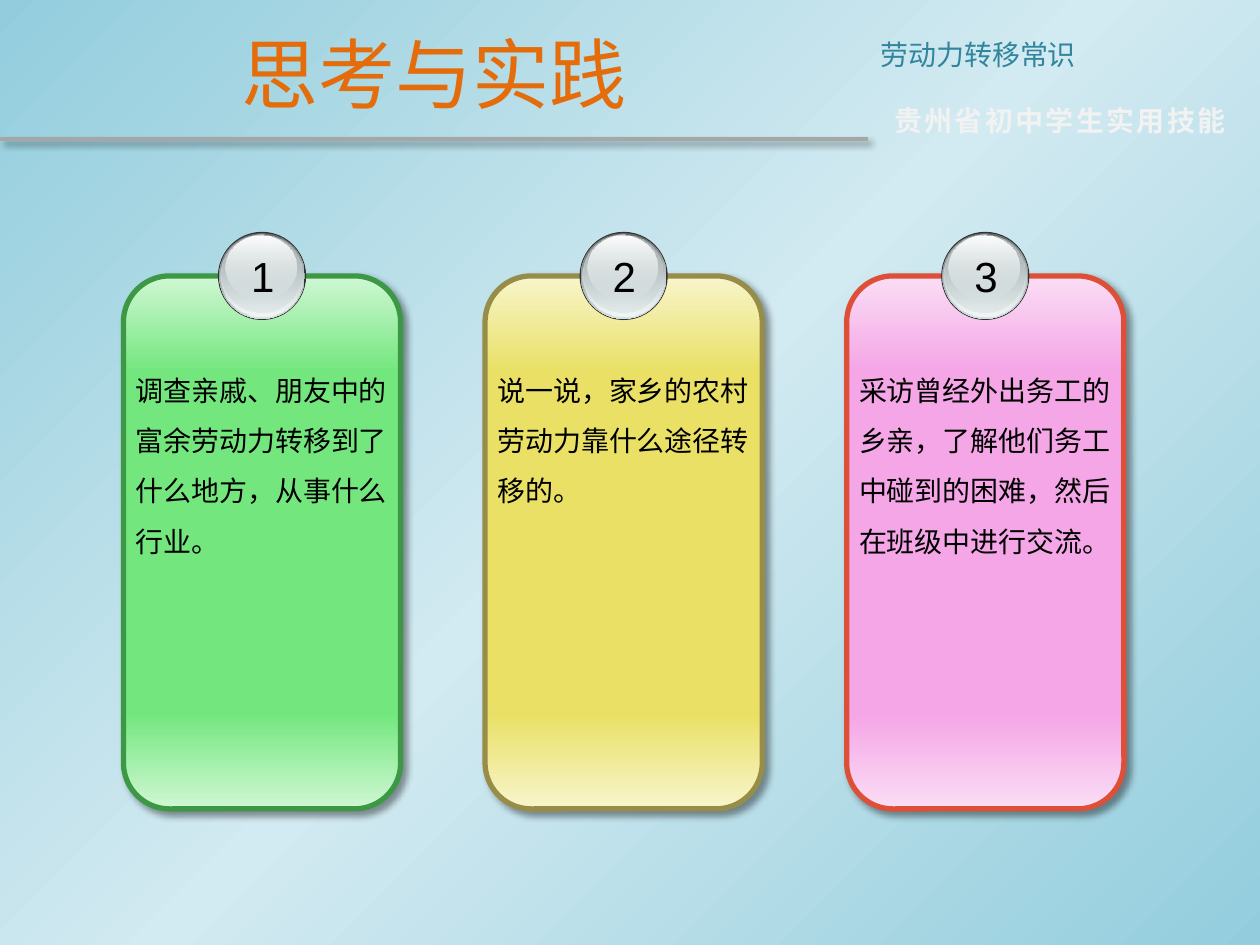
from dataclasses import dataclass
from typing import Optional

from lxml import etree
from pptx import Presentation
from pptx.dml.color import RGBColor
from pptx.enum.shapes import MSO_CONNECTOR, MSO_SHAPE
from pptx.enum.text import MSO_ANCHOR, MSO_AUTO_SIZE, PP_ALIGN
from pptx.oxml.ns import qn
from pptx.shapes.shapetree import GroupShapes
from pptx.text.text import TextFrame
from pptx.util import Inches, Pt

ROUNDED = MSO_SHAPE.ROUNDED_RECTANGLE
OVAL = MSO_SHAPE.OVAL
STRAIGHT = MSO_CONNECTOR.STRAIGHT
LEFT, CENTER, JUSTIFY = PP_ALIGN.LEFT, PP_ALIGN.CENTER, PP_ALIGN.JUSTIFY
TOP, MIDDLE = MSO_ANCHOR.TOP, MSO_ANCHOR.MIDDLE
NO_AUTOFIT = MSO_AUTO_SIZE.NONE


@dataclass(frozen=True)
class Theme:
    chinese_font: str = "Noto Sans CJK SC"
    number_font: str = "Arial"
    title_size: int = 44
    number_size: int = 24
    text_size: int = 16
    title: str = "E46C0A"
    course: str = "31859C"
    program: str = "F2F2F2"
    text: str = "000000"
    rule: str = "A6A6A6"
    badge_rim: str = "333333"
    edge: str = "93CDDD"
    glow: str = "D2EAF1"


@dataclass(frozen=True)
class Stop:
    position: int
    color: str
    opacity: int = 100


@dataclass(frozen=True)
class Card:
    paragraphs: tuple[str, ...]
    pale: str
    strong: str
    border: str
    text_height: float


@dataclass(frozen=True)
class BadgeLayer:
    offset: float
    top: float
    width: float
    height: float
    stops: tuple[Stop, ...] = ()


THEME = Theme()
CARD_LEFT, CARD_TOP, CARD_WIDTH, CARD_HEIGHT, CARD_STEP = 0.98, 2.19, 2.2, 4.23, 2.87
HEADER_WIDTH = 6.89

CARDS = (
    Card(("调查亲戚、朋友中的富余劳动力转移到了什么地方，从事什么", "行业。"),
         "D0F7D4", "73E77E", "3C9844", 1.72),
    Card(("说一说，家乡的农村劳动力靠什么途径转移的。",),
         "F8F5CC", "E9E065", "978D48", 1.31),
    Card(("采访曾经外出务工的乡亲，了解他们务工中碰到的困难，然后", "在班级中进行交流。"),
         "FBDDF5", "F4A6E6", "DD4F37", 1.72),
)

BADGE = (
    BadgeLayer(0.75, 1.84, 0.7, 0.7),
    BadgeLayer(0.76, 1.85, 0.68, 0.68, (Stop(0, "636869"), Stop(100, "D6E1E2"))),
    BadgeLayer(0.77, 1.85, 0.66, 0.66, (Stop(0, "D6E1E2", 0), Stop(100, "F1F5F5"))),
    BadgeLayer(0.78, 1.86, 0.63, 0.62, (Stop(0, "AAB2B3"), Stop(100, "D6E1E2", 48))),
    BadgeLayer(0.81, 1.87, 0.56, 0.5, (Stop(0, "FFFFFF"), Stop(100, "D6E1E2", 38))),
)


def add_color(parent, color: str, opacity: int) -> None:
    element = etree.SubElement(parent, qn("a:srgbClr"), val=color)
    if opacity < 100:
        etree.SubElement(element, qn("a:alpha"), val=str(opacity * 1000))


def set_gradient(fill, container, stops: tuple[Stop, ...], angle: int) -> None:
    fill.gradient()
    fill.gradient_angle = 360 - angle
    stop_list = next(container.iter(qn("a:gsLst")))
    for old_stop in list(stop_list):
        stop_list.remove(old_stop)
    for stop in stops:
        element = etree.SubElement(stop_list, qn("a:gs"), pos=str(stop.position * 1000))
        add_color(element, stop.color, stop.opacity)


def add_shadow(shape) -> None:
    properties = shape._element.spPr
    for old_effects in properties.findall(qn("a:effectLst")):
        properties.remove(old_effects)
    effects = etree.SubElement(properties, qn("a:effectLst"))
    shadow = etree.SubElement(
        effects, qn("a:outerShdw"), blurRad=str(Pt(4)), dist=str(Pt(3)),
        dir="2700000", algn="tl", rotWithShape="0")
    add_color(shadow, "000000", 40)


def write_text(frame: TextFrame, *paragraphs: str, size: int = THEME.text_size,
               color: str = THEME.text, font: str = THEME.chinese_font,
               bold: bool = False, spacing: int = 0, align: PP_ALIGN = LEFT,
               anchor: MSO_ANCHOR = TOP, line_spacing: Optional[float] = None,
               wrap: bool = True) -> None:
    frame.word_wrap = wrap
    frame.auto_size = NO_AUTOFIT
    frame.vertical_anchor = anchor
    for index, text in enumerate(paragraphs):
        paragraph = frame.add_paragraph() if index else frame.paragraphs[0]
        paragraph.alignment = align
        paragraph.line_spacing = line_spacing
        run = paragraph.add_run()
        run.text = text
        run.font.size = Pt(size)
        run.font.bold = bold
        run.font.color.rgb = RGBColor.from_string(color)
        run.font.name = font
        properties = run.font._element
        etree.SubElement(properties, qn("a:ea"), typeface=font)
        if spacing:
            properties.set("spc", str(spacing))


def add_text(shapes, left: float, top: float, width: float, height: float,
             *paragraphs: str, **text_format) -> None:
    box = shapes.add_textbox(Inches(left), Inches(top), Inches(width), Inches(height))
    write_text(box.text_frame, *paragraphs, **text_format)


def add_badge(shapes: GroupShapes, card_left: float, number: int) -> None:
    for layer in BADGE:
        oval = shapes.add_shape(OVAL, Inches(card_left + layer.offset), Inches(layer.top),
                                Inches(layer.width), Inches(layer.height))
        oval.shadow.inherit = False
        oval.line.fill.background()
        if layer.stops:
            set_gradient(oval.fill, oval._element, layer.stops, 90)
        else:
            oval.fill.solid()
            oval.fill.fore_color.rgb = RGBColor.from_string(THEME.badge_rim)
    add_text(shapes, card_left + 0.91, 1.94, 0.39, 0.5, str(number),
             size=THEME.number_size, font=THEME.number_font, align=CENTER, wrap=False)


def add_card(slide, card: Card, index: int) -> None:
    shapes = slide.shapes.add_group_shape().shapes
    left = CARD_LEFT + index * CARD_STEP
    panel = shapes.add_shape(ROUNDED, Inches(left), Inches(CARD_TOP),
                             Inches(CARD_WIDTH), Inches(CARD_HEIGHT))
    stops = (Stop(0, card.pale), Stop(18, card.strong),
             Stop(82, card.strong), Stop(100, card.pale))
    set_gradient(panel.fill, panel._element, stops, 90)
    panel.line.color.rgb = RGBColor.from_string(card.border)
    panel.line.width = Pt(3)
    add_shadow(panel)
    add_text(shapes, left, 2.78, CARD_WIDTH, card.text_height,
             *card.paragraphs, line_spacing=1.5)
    add_badge(shapes, left, index + 1)


def add_header(slide) -> None:
    rule = slide.shapes.add_connector(STRAIGHT, 0, Inches(1.1),
                                      Inches(HEADER_WIDTH), Inches(1.1))
    rule.line.color.rgb = RGBColor.from_string(THEME.rule)
    rule.line.width = Pt(2.25)
    add_shadow(rule)
    title = slide.shapes.title
    title.left, title.top = Inches(0), Inches(0.07)
    title.width, title.height = Inches(HEADER_WIDTH), Inches(1.02)
    write_text(title.text_frame, "思考与实践", size=THEME.title_size,
               color=THEME.title, align=CENTER, anchor=MIDDLE)
    add_text(slide.shapes, HEADER_WIDTH, 0.25, 3.11, 0.37, "劳动力转移常识",
             color=THEME.course, align=JUSTIFY)
    add_text(slide.shapes, 7, 0.77, 3, 0.37, "贵州省初中学生实用技能",
             color=THEME.program, bold=True, spacing=140, wrap=False)


def main() -> None:
    presentation = Presentation()
    presentation.slide_width, presentation.slide_height = Inches(10), Inches(7.5)
    slide = presentation.slides.add_slide(presentation.slide_layouts[5])
    background = slide.background
    set_gradient(background.fill, slide._element,
                 (Stop(0, THEME.edge), Stop(50, THEME.glow), Stop(100, THEME.edge)), 45)
    add_header(slide)
    for index, card in enumerate(CARDS):
        add_card(slide, card, index)
    presentation.save("out.pptx")


if __name__ == "__main__":
    main()
